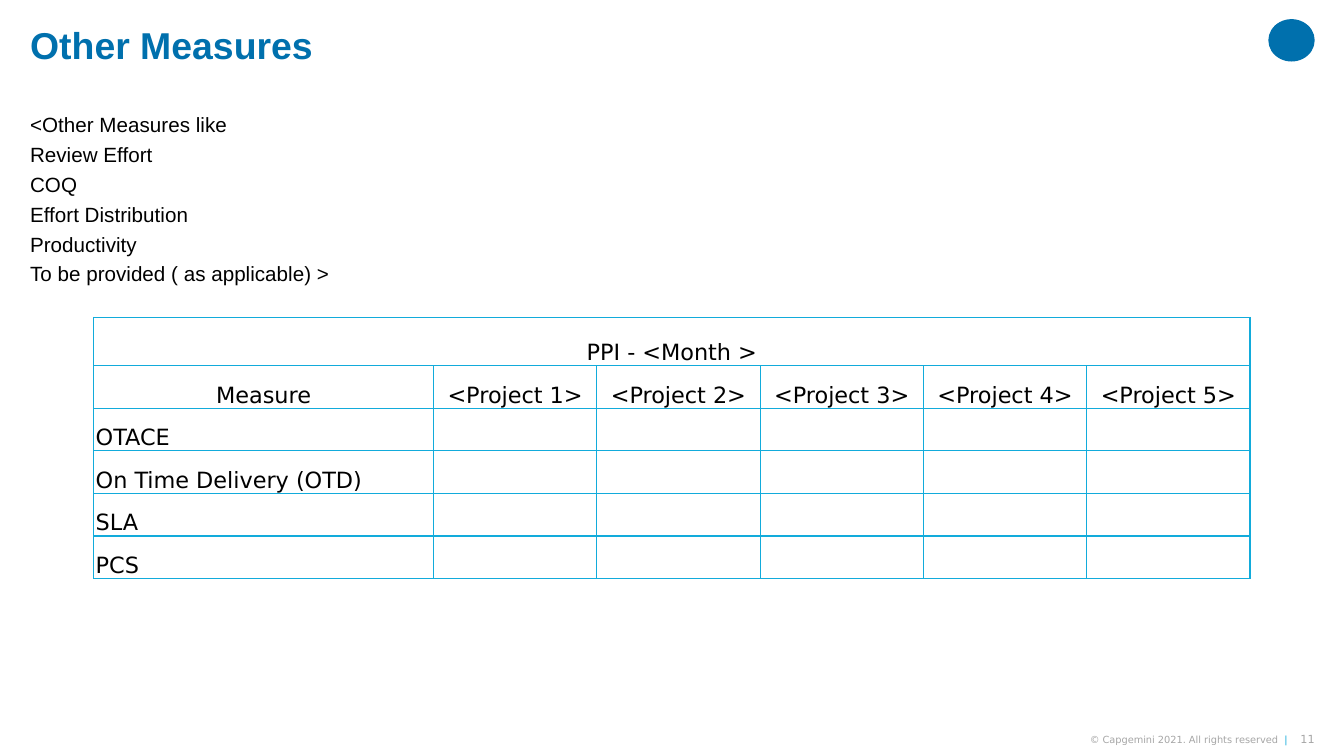
from lxml import etree
from pptx import Presentation
from pptx.dml.color import RGBColor
from pptx.enum import shapes, text
from pptx.oxml import ns
from pptx.util import Inches, Pt

BLUE = RGBColor(0x00, 0x70, 0xAD)
CYAN = RGBColor(0x12, 0xAB, 0xDB)
GRAY = RGBColor(0xA6, 0xA6, 0xA6)
BLACK = RGBColor(0, 0, 0)

TITLE = {"name": "Arial", "size": Pt(26.7), "bold": True, "color": BLUE}
BODY = {"name": "Arial", "size": Pt(14.7), "color": BLACK}
CELL = {"name": "DejaVu Sans", "size": Pt(16), "color": BLACK}
FOOTER = {"name": "DejaVu Sans", "size": Pt(7), "color": GRAY}
DIVIDER = {**FOOTER, "color": CYAN}
PAGE_NUMBER = {**FOOTER, "size": Pt(8)}

FLUSH = {f"margin_{side}": 0 for side in ("left", "top", "right", "bottom")}
FLUSH["vertical_anchor"] = text.MSO_ANCHOR.MIDDLE
CELL_LAYOUT = {
    "margin_left": Inches(0.02),
    "margin_top": Inches(0.02),
    "margin_right": Inches(0.02),
    "margin_bottom": 0,
    "vertical_anchor": text.MSO_ANCHOR.BOTTOM,
}
RIGHT = {"alignment": text.PP_ALIGN.RIGHT}
CENTER = {"alignment": text.PP_ALIGN.CENTER}
LEFT = {"alignment": text.PP_ALIGN.LEFT}


def apply(target, values):
    for name, value in values.items():
        setattr(target, name, value)


class SlideBuilder:
    def __init__(self, slide, border_color, border_width):
        self.slide = slide
        self.border_color = border_color
        self.border_width = border_width

    def add_runs(self, paragraph, runs, layout):
        apply(paragraph, layout)
        for words, style in runs:
            run = paragraph.add_run()
            run.text = words
            apply(run.font, {key: style[key] for key in style if key != "color"})
            run.font.color.rgb = style["color"]

    def text_box(self, box, lines, frame_layout, paragraph_layout, gap=0):
        frame = self.slide.shapes.add_textbox(*map(Inches, box)).text_frame
        apply(frame, {"word_wrap": True, **frame_layout})
        for index, runs in enumerate(lines):
            paragraph = frame.add_paragraph() if index else frame.paragraphs[0]
            self.add_runs(paragraph, runs, paragraph_layout)
            if index:
                paragraph.space_before = Pt(gap)

    def oval(self, box, color):
        shape = self.slide.shapes.add_shape(shapes.MSO_SHAPE.OVAL, *map(Inches, box))
        shape.shadow.inherit = False
        shape.fill.solid()
        shape.fill.fore_color.rgb = color
        shape.line.fill.background()

    def border(self, cell):
        properties = cell._tc.get_or_add_tcPr()
        for position, side in enumerate(("lnL", "lnR", "lnT", "lnB")):
            line = etree.Element(ns.qn(f"a:{side}"), w=str(self.border_width))
            fill = etree.SubElement(line, ns.qn("a:solidFill"))
            etree.SubElement(fill, ns.qn("a:srgbClr"), val=str(self.border_color))
            properties.insert(position, line)

    def table(self, box, widths, heights, rows, style):
        frame = self.slide.shapes.add_table(len(heights), len(widths), *map(Inches, box))
        table = frame.table
        apply(table, {"first_row": False, "horz_banding": False})
        for column, width in zip(table.columns, widths):
            column.width = Inches(width)
        for row, height in zip(table.rows, heights):
            row.height = Inches(height)
        for cell in table.iter_cells():
            apply(cell, CELL_LAYOUT)
            cell.fill.background()
            self.border(cell)
        table.cell(0, 0).merge(table.cell(0, len(widths) - 1))
        for row_index, row in enumerate(rows):
            for column_index, words in enumerate(row):
                paragraph = table.cell(row_index, column_index).text_frame.paragraphs[0]
                self.add_runs(paragraph, [(words, style)], CENTER if row_index < 2 else LEFT)


def main():
    presentation = Presentation()
    apply(presentation, {"slide_width": Inches(13.33), "slide_height": Inches(7.5)})
    slide = presentation.slides.add_slide(presentation.slide_layouts[6])
    builder = SlideBuilder(slide, CYAN, Pt(1))

    builder.oval((12.58, 0.19, 0.46, 0.42), BLUE)
    builder.text_box((12.85, 7.27, 0.19, 0.13), [[("11", PAGE_NUMBER)]],
                     {**FLUSH, "word_wrap": False}, RIGHT)
    copyright_line = [("© Capgemini 2021. All rights reserved  ", FOOTER), ("|", DIVIDER)]
    builder.text_box((9.86, 7.27, 2.91, 0.13), [copyright_line], FLUSH, RIGHT)
    builder.text_box((0.2, 0.22, 12.29, 0.49), [[("Other Measures", TITLE)]],
                     {}, {"line_spacing": 0.9})

    measures = ["<Other Measures like", "Review Effort", "COQ", "Effort Distribution",
                "Productivity", "To be provided ( as applicable) >"]
    builder.text_box((0.2, 1.06, 10.57, 1.83), [[(line, BODY)] for line in measures],
                     {}, {}, gap=3.7)

    project_count = 5
    header = ["Measure"] + [f"<Project {number + 1}>" for number in range(project_count)]
    indicators = ["OTACE", "On Time Delivery (OTD)", "SLA", "PCS"]
    rows = [["PPI - <Month >"], header] + [[indicator] for indicator in indicators]
    height, first_height = 2.59, 0.48
    row_height = (height - first_height) / (len(rows) - 1)
    builder.table((0.93, 3.15, 11.47, height), [3.37] + [1.62] * project_count,
                  [first_height] + [row_height] * (len(rows) - 1), rows, CELL)

    presentation.save("out.pptx")


if __name__ == "__main__":
    main()
